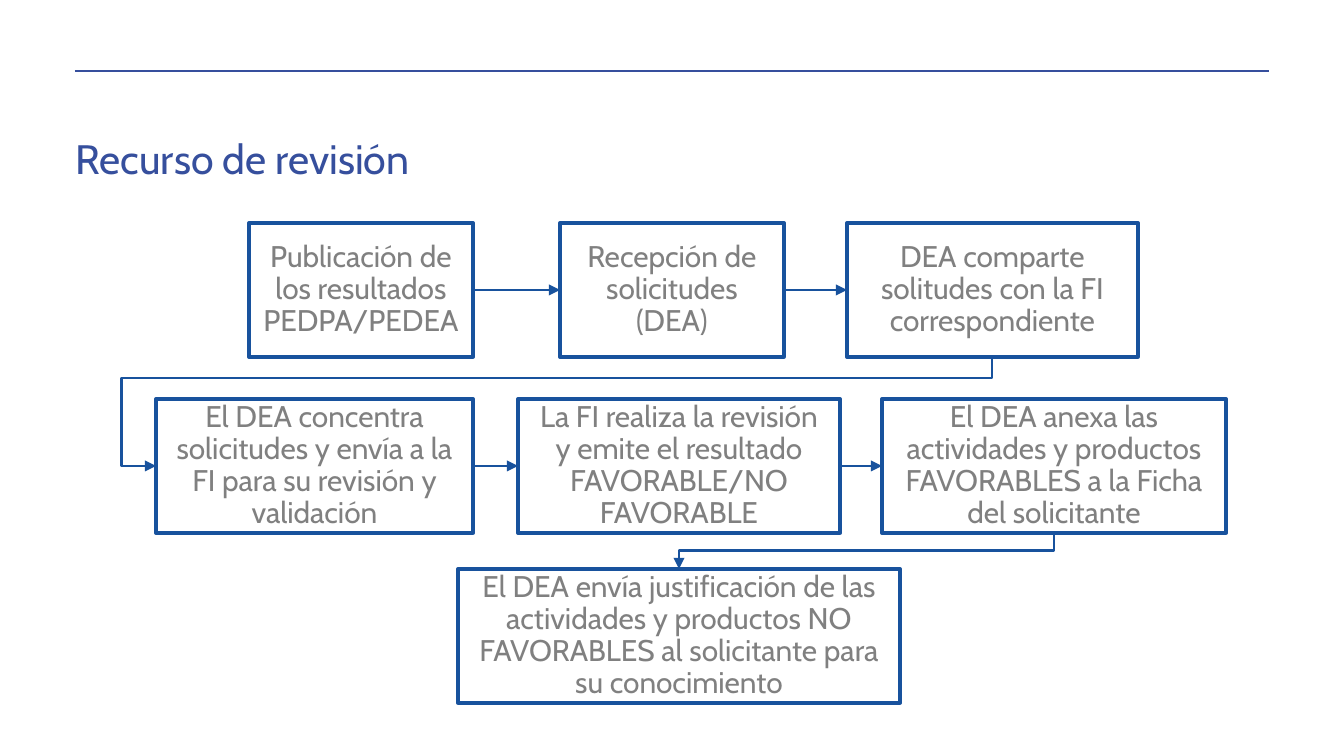
from dataclasses import dataclass

import pptx
import pptx.dml.color
import pptx.enum.shapes
import pptx.enum.text
import pptx.oxml
import pptx.oxml.ns
import pptx.util

EMU_PER_PX = 914400 / 134.4
FONT = "Cabin"
INDIGO = "364F9D"
BLUE = "18529D"
GREY = "808080"
WHITE = "FFFFFF"
BOX_HEIGHT = 134
TOP, LEFT, BOTTOM, RIGHT = 0, 1, 2, 3


@dataclass
class Step:
    left: int
    top: int
    width: int
    text: str

    @property
    def center(self) -> int:
        return self.left + self.width // 2

    @property
    def middle(self) -> int:
        return self.top + BOX_HEIGHT // 2

    @property
    def bottom(self) -> int:
        return self.top + BOX_HEIGHT


FIRST_ROW = [
    Step(249, 223, 224, "Publicación de los resultados PEDPA/PEDEA"),
    Step(560, 223, 224, "Recepción de solicitudes (DEA)"),
    Step(847, 223, 291, "DEA comparte solitudes con la FI correspondiente"),
]
SECOND_ROW = [
    Step(156, 399, 317, "El DEA concentra solicitudes y envía a la FI para su revisión y validación"),
    Step(518, 399, 322, "La FI realiza la revisión y emite el resultado FAVORABLE/NO FAVORABLE"),
    Step(882, 399, 344, "El DEA anexa las actividades y productos FAVORABLES a la Ficha del solicitante"),
]
LAST_STEP = Step(458, 569, 442, "El DEA envía justificación de las actividades y productos "
                                "NO FAVORABLES al solicitante para su conocimiento")


def px(length: float) -> int:
    return round(length * EMU_PER_PX)


def color(value: str) -> pptx.dml.color.RGBColor:
    return pptx.dml.color.RGBColor.from_string(value)


def style_paragraph(paragraph, size: int, text_color: str) -> None:
    paragraph.font.name = FONT
    paragraph.font.size = pptx.util.Pt(size)
    paragraph.font.color.rgb = color(text_color)


def set_margins(frame, horizontal: int, vertical: int) -> None:
    frame.margin_left = frame.margin_right = px(horizontal)
    frame.margin_top = frame.margin_bottom = px(vertical)


def draw_step(slide, step: Step):
    box = slide.shapes.add_shape(pptx.enum.shapes.MSO_SHAPE.RECTANGLE, px(step.left),
                                 px(step.top), px(step.width), px(BOX_HEIGHT))
    box.shadow.inherit = False
    box.fill.solid()
    box.fill.fore_color.rgb = color(WHITE)
    box.line.color.rgb = color(BLUE)
    box.line.width = pptx.util.Pt(2)
    frame = box.text_frame
    frame.word_wrap = True
    frame.vertical_anchor = pptx.enum.text.MSO_ANCHOR.MIDDLE
    set_margins(frame, 13, 13)
    paragraph = frame.paragraphs[0]
    paragraph.text = step.text
    paragraph.alignment = pptx.enum.text.PP_ALIGN.CENTER
    paragraph.line_spacing = 0.9
    style_paragraph(paragraph, 16, GREY)
    return box


def draw_line(slide, kind, start: tuple[float, float], end: tuple[float, float],
              line_color: str, width: float, arrow: bool):
    line = slide.shapes.add_connector(kind, px(start[0]), px(start[1]), px(end[0]), px(end[1]))
    line.line.color.rgb = color(line_color)
    line.line.width = pptx.util.Pt(width)
    properties = line._element.spPr
    if arrow:
        head = pptx.oxml.parse_xml(
            f'<a:tailEnd {pptx.oxml.ns.nsdecls("a")} type="triangle"/>')
        line.line._get_or_add_ln().append(head)
    properties.append(pptx.oxml.parse_xml(f'<a:effectLst {pptx.oxml.ns.nsdecls("a")}/>'))
    return line


def draw_row(slide, steps: list[Step]) -> None:
    boxes = [draw_step(slide, step) for step in steps]
    for i in range(len(steps) - 1):
        before, after = steps[i], steps[i + 1]
        arrow = draw_line(slide, pptx.enum.shapes.MSO_CONNECTOR.STRAIGHT,
                          (before.left + before.width, before.middle),
                          (after.left, after.middle), BLUE, 1.5, True)
        arrow.begin_connect(boxes[i], RIGHT)
        arrow.end_connect(boxes[i + 1], LEFT)


def draw_bent_arrow(slide, start: tuple[int, int], end: tuple[int, int],
                    preset: str, bends: list[float]) -> None:
    """Arrow that leaves downwards and ends lower left: an elbow turned by 90 degrees."""
    across, down = start[0] - end[0], end[1] - start[1]
    x, y = (start[0] + end[0]) / 2, (start[1] + end[1]) / 2
    arrow = draw_line(slide, pptx.enum.shapes.MSO_CONNECTOR.ELBOW,
                      (x - down / 2, y - across / 2), (x + down / 2, y + across / 2),
                      BLUE, 1.5, True)
    properties = arrow._element.spPr
    properties.find(pptx.oxml.ns.qn("a:xfrm")).set("rot", "5400000")
    geometry = properties.find(pptx.oxml.ns.qn("a:prstGeom"))
    geometry.set("prst", preset)
    adjustments = geometry.find(pptx.oxml.ns.qn("a:avLst"))
    for number, bend in enumerate(bends, 1):
        adjustments.append(pptx.oxml.parse_xml(
            f'<a:gd {pptx.oxml.ns.nsdecls("a")} name="adj{number}" '
            f'fmla="val {round(bend * 100000)}"/>'))


def draw_title(slide, text: str) -> None:
    title = slide.shapes.title
    title.left, title.top, title.width, title.height = px(65), px(146), px(906), px(42)
    frame = title.text_frame
    frame.auto_size = pptx.enum.text.MSO_AUTO_SIZE.NONE
    frame.word_wrap = True
    frame.vertical_anchor = pptx.enum.text.MSO_ANCHOR.BOTTOM
    set_margins(frame, 11, 5)
    paragraph = frame.paragraphs[0]
    paragraph.text = text
    paragraph.alignment = pptx.enum.text.PP_ALIGN.LEFT
    style_paragraph(paragraph, 22, INDIGO)


def main() -> None:
    deck = pptx.Presentation()
    deck.slide_width, deck.slide_height = px(1344), px(756)
    slide = deck.slides.add_slide(deck.slide_layouts[5])

    # Header rule and title
    draw_line(slide, pptx.enum.shapes.MSO_CONNECTOR.STRAIGHT, (75, 71), (1269, 71),
              INDIGO, 0.75, False)
    draw_title(slide, "Recurso de revisión")

    # Steps and the arrows within each row
    for row in (FIRST_ROW, SECOND_ROW, [LAST_STEP]):
        draw_row(slide, row)

    # Arrows from one row to the next
    source, target = FIRST_ROW[-1], SECOND_ROW[0]
    lane_x, lane_y = 122, 378
    draw_bent_arrow(slide, (source.center, source.bottom), (target.left, target.middle),
                    "bentConnector4",
                    [(lane_y - source.bottom) / (target.middle - source.bottom),
                     (source.center - lane_x) / (source.center - target.left)])
    source = SECOND_ROW[-1]
    draw_bent_arrow(slide, (source.center, source.bottom), (LAST_STEP.center, LAST_STEP.top),
                    "bentConnector3", [0.5])

    deck.save("out.pptx")


if __name__ == "__main__":
    main()
